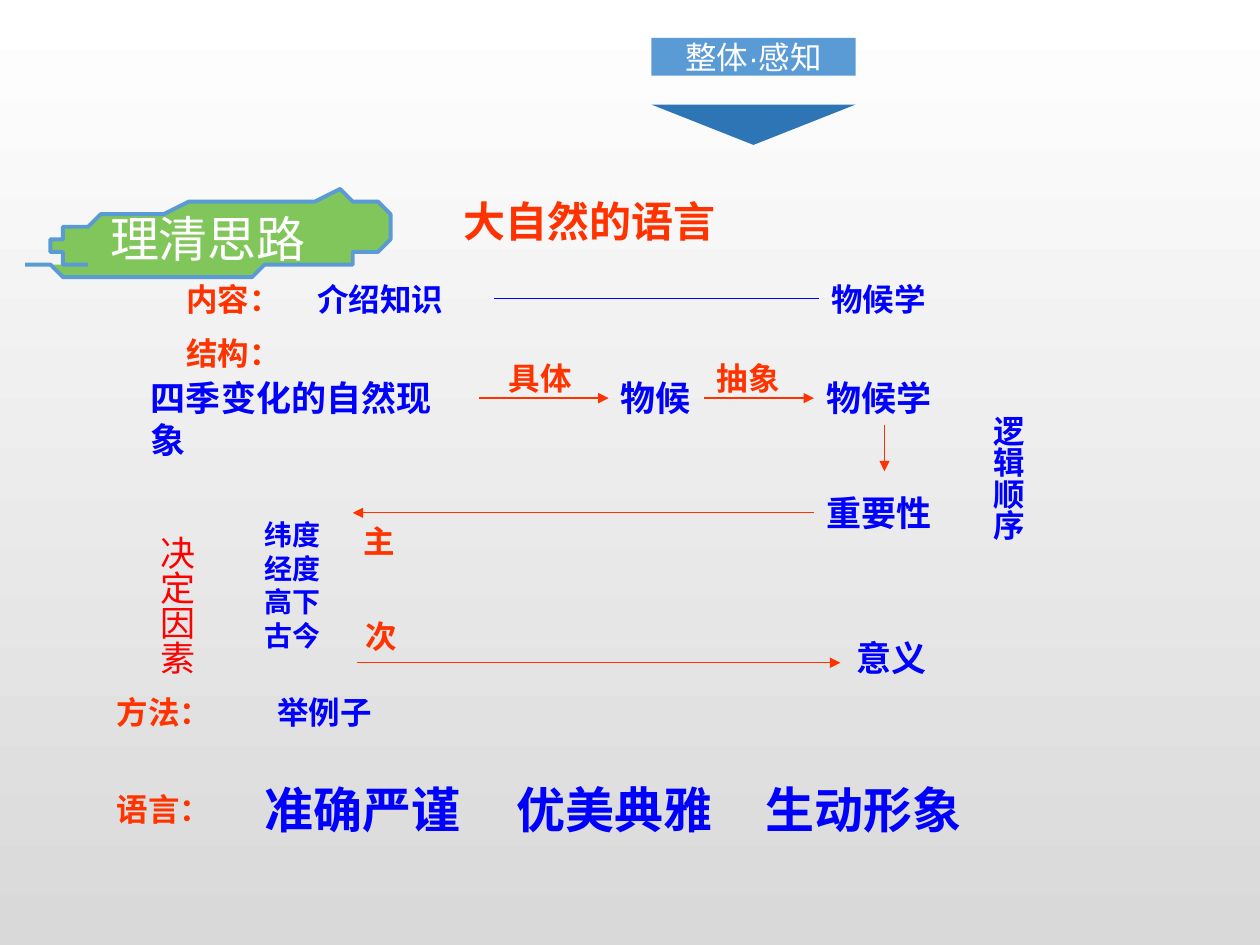
from lxml.etree import SubElement
from pptx import Presentation
from pptx.dml.color import RGBColor
from pptx.enum.shapes import MSO_CONNECTOR, MSO_SHAPE
from pptx.enum.text import MSO_ANCHOR, MSO_AUTO_SIZE, PP_ALIGN
from pptx.oxml.ns import qn
from pptx.util import Inches, Pt

UNIT = Inches(0.1)
COLS, ROWS = 100, 75
LATIN, ASIAN = "Arial", "Noto Sans CJK SC"
HUES = {
    "blue": "0000FF", "orange": "FF3300", "red": "FF0000", "white": "FFFFFF",
    "gray": "D9D9D9", "sky": "5B9BD5", "deep": "2E75B6", "leaf": "81C65A",
}
HEIGHTS = {16: 11.8, 18: 4, 20: 4.4, 24: 5, 28: 5.7}
LABELS = [
    ("语言：", 8.3, 62.2, 18, "orange", 8.7),
    ("内容：", 13.8, 21.7, 18, "orange", 13),
    ("介绍知识", 24.2, 21.7, 18, "blue", 23.3),
    ("结构：", 13.8, 26, 18, "orange", None),
    ("纬度\n经度\n高下\n古今", 20, 40.6, 16, "blue", None),
    ("意义", 67, 50, 20, "blue", None),
    ("主", 27.9, 40.9, 18, "orange", None),
    ("次", 28, 48.5, 18, "orange", None),
    ("具体", 39.4, 28, 18, "orange", None),
    ("抽象", 55.9, 28, 18, "orange", None),
    ("方法：", 8.3, 54.5, 18, "orange", 13.6),
    ("举例子", 21, 54.5, 18, "blue", 10.2),
    ("准确严谨", 20, 61.4, 28, "blue", 18.1),
    ("优美典雅", 40, 61.4, 28, "blue", 22.2),
    ("生动形象", 59.8, 61.4, 28, "blue", 20.8),
]
LEAF = [
    (1.5, 20.8),
    (3.1, 21.7), (6.7, 21.6), (10.6, 21.6),
    (14.4, 21.7), (21.2, 21.6), (24.5, 21.2),
    (27.8, 20.8), (29.3, 20), (30.4, 19.5),
    (31.5, 18.9), (31.4, 18.4), (30.9, 17.7),
    (30.4, 17), (31.2, 15.6), (27.6, 15.5),
    (24, 15.4), (13.4, 16.5), (9.5, 17.1),
    (5.7, 17.8), (5.1, 18), (4.5, 19.3),
    (3.9, 20.7), (6.3, 20.9), (6.7, 21.3),
]


def grid(*nums):
    return [round(num * UNIT) for num in nums]


def tint(name):
    return RGBColor.from_string(HUES[name])


def apply(thing, form):
    for key, value in form.items():
        setattr(thing, key, value)


def write(shape, text, size, hue, bold=True, latin=LATIN, align=PP_ALIGN.LEFT, **form):
    frame = shape.text_frame
    frame.text = text
    apply(frame, {"vertical_anchor": MSO_ANCHOR.TOP, **form})
    for para in frame.paragraphs:
        para.alignment = align
        for run in para.runs:
            apply(run.font, {"size": Pt(size), "bold": bold, "name": latin})
            run.font.color.rgb = tint(hue)
            SubElement(run.font._element, qn("a:ea"), typeface=ASIAN)


def label(slide, text, left, top, size, hue, width=None):
    wide = width or max(map(len, text.split("\n"))) * size / 7.2 + 2
    box = slide.shapes.add_textbox(*grid(left, top, wide, HEIGHTS[size]))
    write(box, text, size, hue, word_wrap=width is not None,
          auto_size=MSO_AUTO_SIZE.SHAPE_TO_FIT_TEXT)
    return box


def column(slide, text, place, size, hue, bold):
    box = slide.shapes.add_textbox(*grid(*place))
    write(box, text, size, hue, bold, word_wrap=True)
    box.text_frame._txBody.bodyPr.set("vert", "eaVert")


def link(slide, start, end, hue="orange", tip=True, tail=None, head=None):
    line = slide.shapes.add_connector(MSO_CONNECTOR.STRAIGHT, *grid(*start, *end))
    line.line.color.rgb = tint(hue)
    line.line.width = Pt(0.75)
    if tail:
        line.begin_connect(*tail)
    if head:
        line.end_connect(*head)
    if tip:
        SubElement(line.line._get_or_add_ln(), qn("a:tailEnd"), type="triangle")
    SubElement(line._element.spPr, qn("a:effectLst"))


def paint(shape, hue, edge=None):
    shape.shadow.inherit = False
    shape.fill.solid()
    shape.fill.fore_color.rgb = tint(hue)
    if edge:
        shape.line.color.rgb = tint(edge)
        shape.line.width = Pt(2.25)
    else:
        shape.line.fill.background()


def curve(points, steps=12):
    for i in range(0, len(points) - 1, 3):
        a, b, c, d = points[i:i + 4]
        for step in range(1, steps + 1):
            t = step / steps
            u = 1 - t
            yield tuple(u**3 * p + 3 * u * u * t * q + 3 * u * t * t * r + t**3 * s
                        for p, q, r, s in zip(a, b, c, d))


def leaf(slide):
    pen = slide.shapes.build_freeform(*LEAF[0], scale=UNIT)
    pen.add_line_segments(list(curve(LEAF)), close=False)
    shape = pen.convert_to_shape()
    paint(shape, "leaf", "sky")
    write(shape, "理清思路", 28, "white", False, ASIAN, PP_ALIGN.CENTER,
          vertical_anchor=MSO_ANCHOR.MIDDLE, margin_top=Inches(0.12))


def badge(slide):
    group = slide.shapes.add_group_shape()
    bar = group.shapes.add_shape(MSO_SHAPE.RECTANGLE, *grid(51.7, 3, 16.2, 3))
    paint(bar, "sky")
    sides = dict.fromkeys(("margin_left", "margin_top", "margin_right", "margin_bottom"), 0)
    write(bar, "整体·感知", 18, "white", False, align=PP_ALIGN.CENTER,
          vertical_anchor=MSO_ANCHOR.MIDDLE, **sides)
    point = group.shapes.add_shape(MSO_SHAPE.FLOWCHART_MERGE, *grid(51.7, 8.3, 16.2, 3.2))
    paint(point, "deep")


def shade(slide):
    fill = slide.background.fill
    fill.gradient()
    fill.gradient_angle = 270
    for stop, hue in zip(fill.gradient_stops, ("white", "gray")):
        stop.color.rgb = tint(hue)


def head(slide):
    title = slide.shapes.title
    apply(title, dict(zip(("left", "top", "width", "height"), grid(35.8, 15, 23.3, 5))))
    write(title, "大自然的语言", 24, "orange", word_wrap=True, auto_size=MSO_AUTO_SIZE.NONE)


def flow(slide):
    field = label(slide, "物候学", 65, 21.7, 18, "blue")
    scene = label(slide, "四季变化的自然现象", 11, 29.4, 20, "blue")
    sign = label(slide, "物候", 48.3, 29.4, 20, "blue")
    study = label(slide, "物候学", 64.6, 29.4, 20, "blue")
    worth = label(slide, "重要性", 64.6, 38.5, 20, "blue")
    link(slide, (39.2, 23.7), (65, 23.7), "blue", False, head=(field, 1))
    link(slide, (38, 31.6), (48.3, 31.6), tail=(scene, 3), head=(sign, 1))
    link(slide, (55.9, 31.6), (64.6, 31.6), tail=(sign, 3), head=(study, 1))
    link(slide, (64.6, 40.7), (28, 40.7), tail=(worth, 1))
    link(slide, (28.3, 52.6), (66.7, 52.6))
    link(slide, (70.2, 33.7), (70.2, 37.4))


def main():
    deck = Presentation()
    deck.slide_width, deck.slide_height = grid(COLS, ROWS)
    slide = deck.slides.add_slide(deck.slide_layouts[5])
    shade(slide)
    head(slide)
    for item in LABELS:
        label(slide, *item)
    flow(slide)
    column(slide, "逻辑顺序", (77, 32, 5, 21.9), 18, "blue", True)
    column(slide, "决定因素", (10.8, 41.5, 5.4, 17.9), 20, "red", False)
    leaf(slide)
    badge(slide)
    deck.save("out.pptx")


if __name__ == "__main__":
    main()
